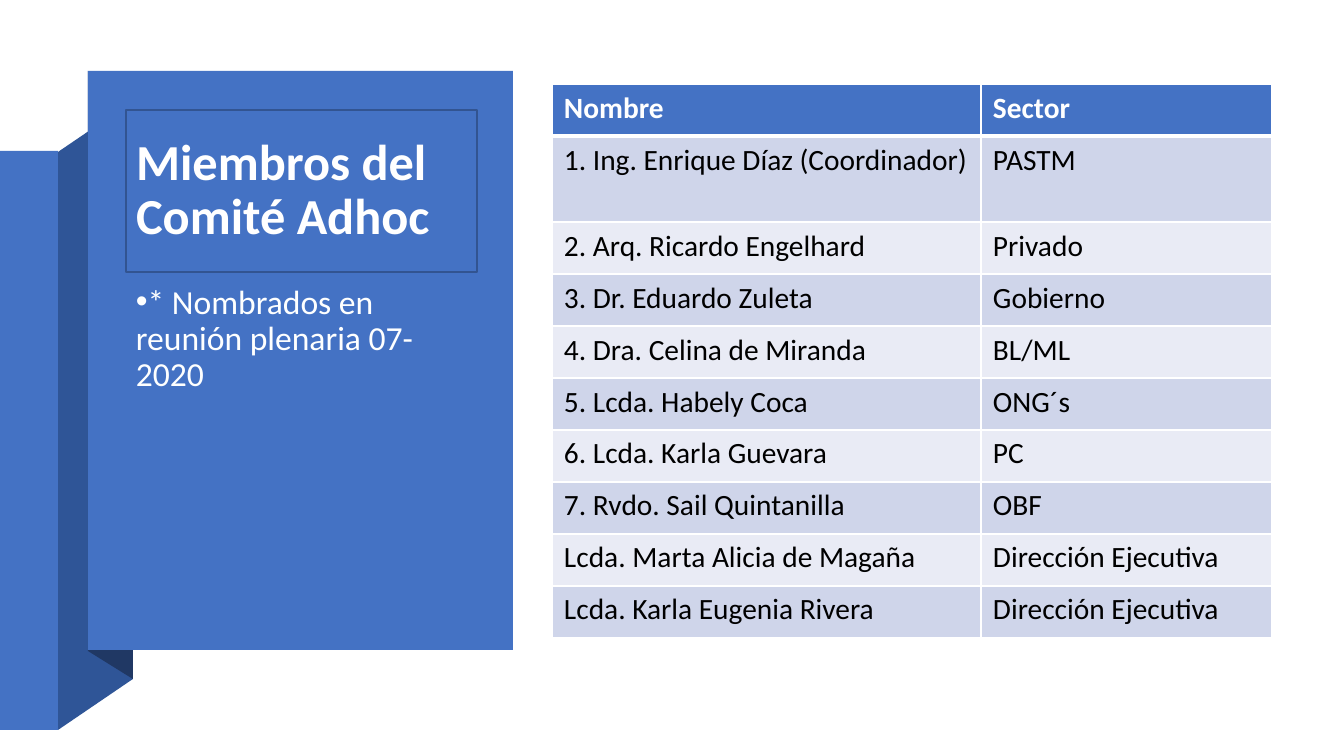
import pptx
import pptx.dml.color
import pptx.enum.shapes
import pptx.enum.text
import pptx.oxml
import pptx.oxml.ns
import pptx.util

PX = 914400 / 100.8
BLUE, WHITE, BLACK = "4472C4", "FFFFFF", "000000"
SIDE, FOLD, TITLE_LINE, NOTE = "2F5597", "203864", "325491", "FEFFFF"
BANDS = ("E9EBF5", "CFD5EA")

MEMBERS = [
    ("Nombre", "Sector"),
    ("1. Ing. Enrique Díaz (Coordinador)", "PASTM"),
    ("2. Arq. Ricardo Engelhard", "Privado"),
    ("3. Dr. Eduardo Zuleta", "Gobierno"),
    ("4. Dra. Celina de Miranda", "BL/ML"),
    ("5. Lcda. Habely Coca", "ONG´s"),
    ("6. Lcda. Karla Guevara", "PC"),
    ("7. Rvdo. Sail Quintanilla", "OBF"),
    ("Lcda. Marta Alicia de Magaña", "Dirección Ejecutiva"),
    ("Lcda. Karla Eugenia Rivera", "Dirección Ejecutiva"),
]


def px(n):
    return pptx.util.Emu(round(n * PX))


def rgb(color):
    return pptx.dml.color.RGBColor.from_string(color)


def paint(fill, color):
    fill.solid()
    fill.fore_color.rgb = rgb(color)


class Deck:
    font = "Calibri"

    def __init__(self, width, height):
        self.prs = pptx.Presentation()
        self.prs.slide_width, self.prs.slide_height = px(width), px(height)
        self.s = self.prs.slides.add_slide(self.prs.slide_layouts[5])

    def add_text(self, tf, text, size, color, bold=False):
        p = tf.paragraphs[0]
        p.alignment = pptx.enum.text.PP_ALIGN.LEFT
        r = p.add_run()
        r.text = text
        r.font.name, r.font.size, r.font.bold = self.font, pptx.util.Pt(size), bold
        r.font.color.rgb = rgb(color)
        return p

    def plain(self, sp, color):
        paint(sp.fill, color)
        sp.line.fill.background()
        sp.shadow.inherit = False

    def rect(self, x, y, w, h, color):
        kind = pptx.enum.shapes.MSO_SHAPE.RECTANGLE
        self.plain(self.s.shapes.add_shape(kind, px(x), px(y), px(w), px(h)), color)

    def polygon(self, points, color):
        builder = self.s.shapes.build_freeform(*points[0], scale=PX)
        builder.add_line_segments(points[1:], close=True)
        self.plain(builder.convert_to_shape(), color)

    def title(self, x, y, w, h, text):
        sp = self.s.shapes.title
        sp.element.getparent().append(sp.element)  # bring above the panel
        sp.left, sp.top, sp.width, sp.height = px(x), px(y), px(w), px(h)
        paint(sp.fill, BLUE)
        sp.line.color.rgb = rgb(TITLE_LINE)
        sp.line.width = pptx.util.Pt(1)
        tf = sp.text_frame
        tf.word_wrap = True
        tf.auto_size = pptx.enum.text.MSO_AUTO_SIZE.NONE
        tf.vertical_anchor = pptx.enum.text.MSO_ANCHOR.MIDDLE
        self.add_text(tf, text, 36, WHITE, True).line_spacing = 0.9

    def bullet(self, x, y, w, h, text):
        tf = self.s.shapes.add_textbox(px(x), px(y), px(w), px(h)).text_frame
        tf.word_wrap = True
        p = self.add_text(tf, text, 24, NOTE)
        p.line_spacing, p.space_after = 0.9, pptx.util.Pt(6)
        pPr = p._p.get_or_add_pPr()
        pPr.set("marL", "0")
        pPr.set("indent", "-228600")
        ns = pptx.oxml.ns.nsdecls("a")
        pPr.append(pptx.oxml.parse_xml(f'<a:buFont {ns} typeface="Arial"/>'))
        pPr.append(pptx.oxml.parse_xml(f'<a:buChar {ns} char="•"/>'))

    def borders(self, cell, top, bottom):
        ns = pptx.oxml.ns.nsdecls("a")
        for side, width in (("L", 1), ("R", 1), ("T", top), ("B", bottom)):
            cell._tc.get_or_add_tcPr().append(pptx.oxml.parse_xml(
                f'<a:ln{side} {ns} w="{width * 12700}"><a:solidFill>'
                f'<a:srgbClr val="{WHITE}"/></a:solidFill></a:ln{side}>'))

    def table(self, x, y, widths, heights, rows):
        table = self.s.shapes.add_table(
            len(rows), len(widths), px(x), px(y),
            px(sum(widths)), px(sum(heights))).table
        for col, width in zip(table.columns, widths):
            col.width = px(width)
        for i, texts in enumerate(rows):
            table.rows[i].height = px(heights[i])
            header = i == 0
            for cell, text in zip(table.rows[i].cells, texts):
                cell.margin_left = cell.margin_right = px(12)
                cell.margin_top = cell.margin_bottom = px(6)
                self.borders(cell, 3 if i == 1 else 1, 3 if header else 1)
                paint(cell.fill, BLUE if header else BANDS[i % 2])
                self.add_text(cell.text_frame, text, 21,
                              WHITE if header else BLACK, header)


def main():
    deck = Deck(1344, 756)

    # Folded ribbon and front panel
    deck.polygon([(58, 730), (133, 679), (133, 101), (58, 152)], SIDE)
    deck.rect(0, 151, 58, 579, BLUE)
    deck.polygon([(88, 651), (133, 679), (133, 100), (88, 71)], FOLD)
    deck.rect(88, 71, 425, 579, BLUE)

    # Title and note
    deck.title(126, 110, 351, 162, "Miembros del Comité Adhoc")
    deck.bullet(126, 280, 353, 330, "* Nombrados en reunión plenaria 07-2020")

    # Committee members
    heights = [52, 86] + [52] * (len(MEMBERS) - 2)
    deck.table(552, 84, [429, 291], heights, MEMBERS)

    deck.prs.save("out.pptx")


if __name__ == "__main__":
    main()
